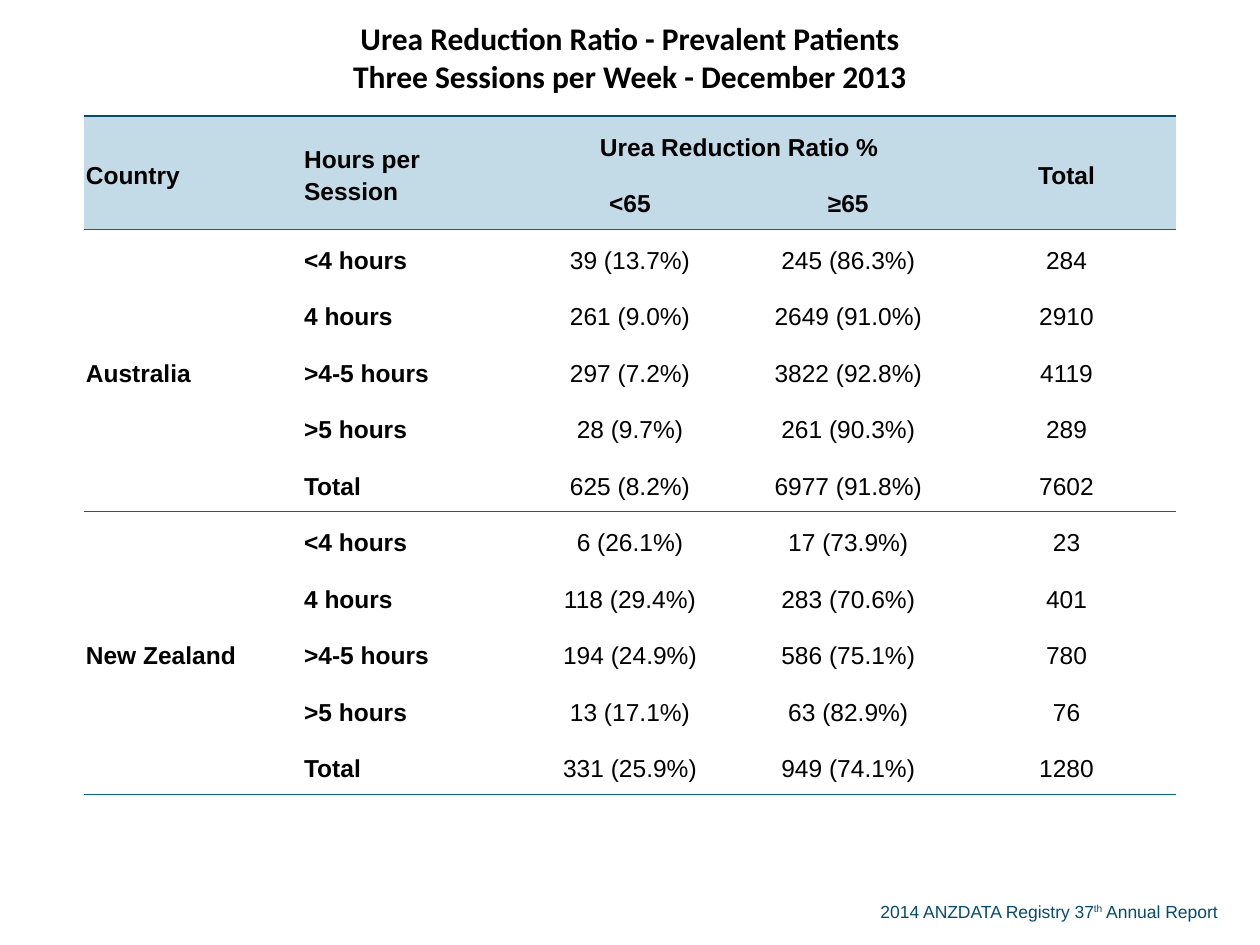
import dataclasses

import pptx
import pptx.dml.color
import pptx.enum.text
import pptx.oxml
import pptx.oxml.ns
import pptx.util
from pptx.util import Cm, Pt

ALIGN = pptx.enum.text.PP_ALIGN
ANCHOR = pptx.enum.text.MSO_ANCHOR


@dataclasses.dataclass(frozen=True)
class Theme:
    ink: str = "000000"
    navy: str = "004D73"
    rule: str = "006699"
    header_fill: str = "C2DBE7"
    title_font: str = "Calibri"
    body_font: str = "Arial"
    title_size: int = 18
    body_size: int = 14
    footer_size: int = 10


THEME = Theme()

TITLE = "Urea Reduction Ratio - Prevalent Patients\vThree Sessions per Week - December 2013"
HEADINGS = [
    ["Country", "Hours per Session", "Urea Reduction Ratio %", "", "Total"],
    ["", "", "<65", "≥65", ""],
]
SESSIONS = ["<4 hours", "4 hours", ">4-5 hours", ">5 hours", "Total"]
COUNTRIES = {
    "Australia": [
        ["39 (13.7%)", "245 (86.3%)", "284"],
        ["261 (9.0%)", "2649 (91.0%)", "2910"],
        ["297 (7.2%)", "3822 (92.8%)", "4119"],
        ["28 (9.7%)", "261 (90.3%)", "289"],
        ["625 (8.2%)", "6977 (91.8%)", "7602"],
    ],
    "New Zealand": [
        ["6 (26.1%)", "17 (73.9%)", "23"],
        ["118 (29.4%)", "283 (70.6%)", "401"],
        ["194 (24.9%)", "586 (75.1%)", "780"],
        ["13 (17.1%)", "63 (82.9%)", "76"],
        ["331 (25.9%)", "949 (74.1%)", "1280"],
    ],
}
MERGES = [
    ((0, 0), (0, 4)),
    ((1, 0), (2, 0)),
    ((1, 1), (2, 1)),
    ((1, 2), (1, 3)),
    ((1, 4), (2, 4)),
    ((3, 0), (7, 0)),
    ((8, 0), (12, 0)),
]
ROW_RULES = {
    1: (THEME.navy, 1),
    3: (THEME.rule, 0.5),
    8: (THEME.rule, 0.5),
    13: (THEME.rule, 0.5),
}


def apply_format(target, values):
    for name, value in values.items():
        setattr(target, name, value)


def style_run(run, family, size, color, bold=False):
    apply_format(run.font, {"name": family, "size": Pt(size), "bold": bold})
    run.font.color.rgb = pptx.dml.color.RGBColor.from_string(color)


def draw_border(cell, side, rule):
    if rule:
        color, width = rule
        paint = f'<a:solidFill><a:srgbClr val="{color}"/></a:solidFill>'
    else:
        paint, width = "<a:noFill/>", 0
    namespace = pptx.oxml.ns.nsdecls("a")
    border = f'<a:ln{side} {namespace} w="{Pt(width)}">{paint}</a:ln{side}>'
    cell._tc.get_or_add_tcPr().append(pptx.oxml.parse_xml(border))


def write_cell(cell, text, row, column):
    apply_format(cell, {
        "margin_left": Cm(0.03),
        "margin_right": Cm(0.03),
        "margin_top": Cm(0.03),
        "margin_bottom": 0,
        "vertical_anchor": ANCHOR.MIDDLE,
    })
    paragraph = cell.text_frame.paragraphs[0]
    paragraph.text = text
    is_title = row == 0
    centered = is_title or column > 1
    paragraph.alignment = ALIGN.CENTER if centered else ALIGN.LEFT
    if not is_title:
        apply_format(paragraph, {"line_spacing": 1.19, "space_after": Pt(14)})
    family, size = (
        (THEME.title_font, THEME.title_size) if is_title
        else (THEME.body_font, THEME.body_size)
    )
    for run in paragraph.runs:
        style_run(run, family, size, THEME.ink, bold=row < 3 or column < 2)


def add_ratio_table(slide, left, top, width, title_height, row_height):
    rows = [[TITLE, "", "", "", ""], *HEADINGS]
    for country, counts in COUNTRIES.items():
        for index, (session, values) in enumerate(zip(SESSIONS, counts)):
            rows.append([country if index == 0 else "", session, *values])
    height = title_height + row_height * (len(rows) - 1)
    table = slide.shapes.add_table(
        len(rows), len(rows[0]), left, top, width, height
    ).table
    apply_format(table, {"first_row": False, "horz_banding": False})
    for column in table.columns:
        column.width = width // len(rows[0])
    for index, row in enumerate(table.rows):
        row.height = row_height if index else title_height
    for first, last in MERGES:
        table.cell(*first).merge(table.cell(*last))
    for r, texts in enumerate(rows):
        for c, text in enumerate(texts):
            cell = table.cell(r, c)
            bottom = r + (cell.span_height if cell.is_merge_origin else 1)
            borders = {
                "L": None, "R": None,
                "T": ROW_RULES.get(r), "B": ROW_RULES.get(bottom),
            }
            for side, rule in borders.items():
                draw_border(cell, side, rule)
            if r in (1, 2):
                cell.fill.solid()
                cell.fill.fore_color.rgb = pptx.dml.color.RGBColor.from_string(
                    THEME.header_fill
                )
            else:
                cell.fill.background()
            if not cell.is_spanned:
                write_cell(cell, text, r, c)


def add_footer(slide, left, top, width, height):
    frame = slide.shapes.add_textbox(left, top, width, height).text_frame
    frame.word_wrap = False
    paragraph = frame.paragraphs[0]
    paragraph.alignment = ALIGN.LEFT
    for text in ("2014 ANZDATA Registry 37", "th", " Annual Report"):
        run = paragraph.add_run()
        run.text = text
        style_run(run, THEME.body_font, THEME.footer_size, THEME.navy)
        if text == "th":
            run.font._element.set("baseline", "30000")


def main():
    deck = pptx.Presentation()
    apply_format(deck, {"slide_width": Cm(25.4), "slide_height": Cm(19.05)})
    slide = deck.slides.add_slide(deck.slide_layouts[6])
    add_footer(slide, Cm(17.5), Cm(18.03), Cm(7.6), Cm(0.69))
    add_ratio_table(slide, Cm(1.7), Cm(0), Cm(22), Cm(2.34), Cm(1.14))
    deck.save("out.pptx")


if __name__ == "__main__":
    main()
